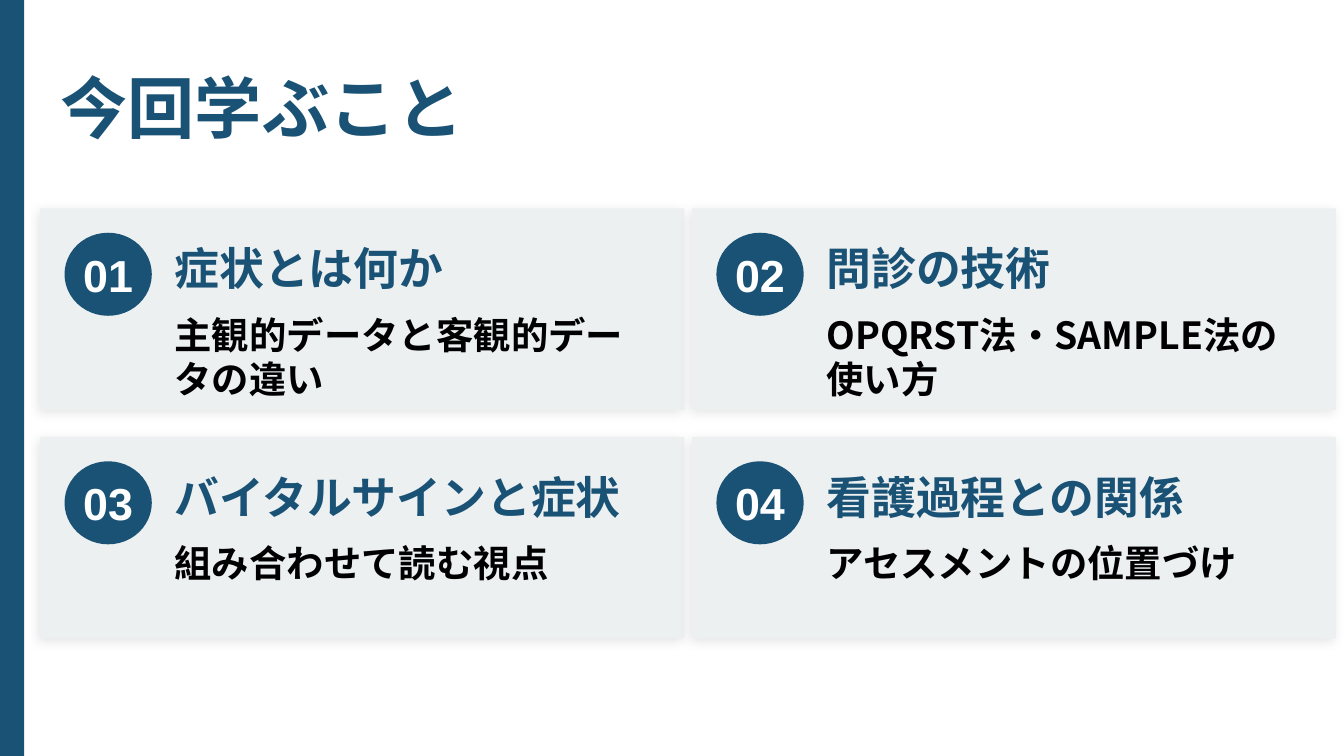
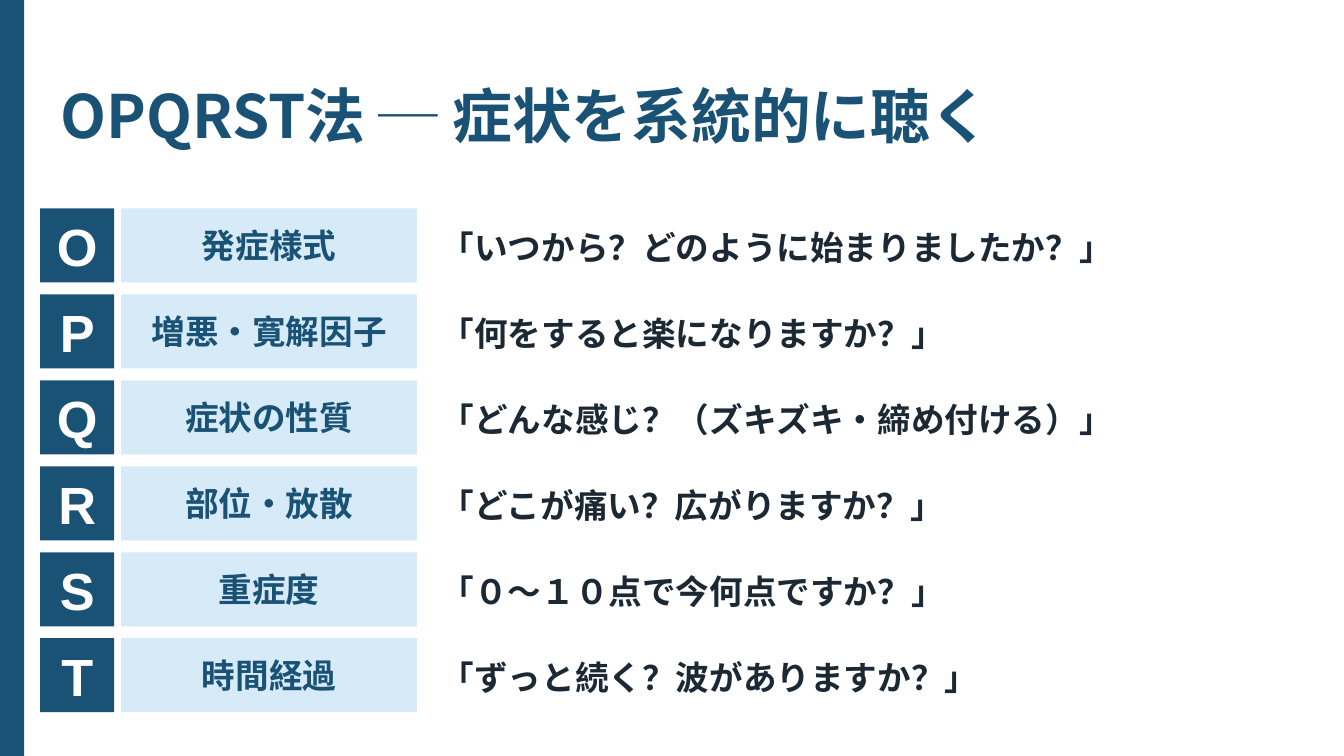
"""Build two nursing slides: the lesson overview and the OPQRST interview method."""
from lxml import etree
from pptx import Presentation
from pptx.dml.color import RGBColor
from pptx.enum.shapes import MSO_SHAPE
from pptx.enum.text import MSO_ANCHOR, MSO_AUTO_SIZE, PP_ALIGN
from pptx.oxml.ns import qn
from pptx.util import Cm, Pt

RECT, OVAL = MSO_SHAPE.RECTANGLE, MSO_SHAPE.OVAL
TOP, MIDDLE = MSO_ANCHOR.TOP, MSO_ANCHOR.MIDDLE
LEFT, CENTER = PP_ALIGN.LEFT, PP_ALIGN.CENTER
NO_AUTOFIT = MSO_AUTO_SIZE.NONE

OVERVIEW_TITLE = "今回学ぶこと"
TOPICS = [
    ("症状とは何か", "主観的データと客観的データの違い"),
    ("問診の技術", "OPQRST法・SAMPLE法の使い方"),
    ("バイタルサインと症状", "組み合わせて読む視点"),
    ("看護過程との関係", "アセスメントの位置づけ"),
]
METHOD_TITLE = "OPQRST法 ─ 症状を系統的に聴く"
STEPS = [
    ("O", "発症様式", "「いつから？どのように始まりましたか？」"),
    ("P", "増悪・寛解因子", "「何をすると楽になりますか？」"),
    ("Q", "症状の性質", "「どんな感じ？（ズキズキ・締め付ける）」"),
    ("R", "部位・放散", "「どこが痛い？広がりますか？」"),
    ("S", "重症度", "「０〜１０点で今何点ですか？」"),
    ("T", "時間経過", "「ずっと続く？波がありますか？」"),
]

COLORS = {
    "navy": "1A5276", "card": "ECF0F1", "sky": "D6EAF8",
    "white": "FFFFFF", "black": "000000", "ink": "1C2833",
}
JP, LATIN = "Noto Sans CJK JP", "Arial"
STYLES = {
    "overview_title": (JP, 36, "navy", LEFT, MIDDLE),
    "method_title": (JP, 32, "navy", LEFT, MIDDLE),
    "number": (LATIN, 24, "white", CENTER, MIDDLE),
    "topic": (JP, 24, "navy", LEFT, MIDDLE),
    "detail": (JP, 20, "black", LEFT, TOP),
    "letter": (LATIN, 28, "white", CENTER, MIDDLE),
    "label": (JP, 18, "navy", CENTER, MIDDLE),
    "question": (JP, 18, "ink", LEFT, MIDDLE),
}
SLIDE_W, SLIDE_H = 25.4, 14.29
GRID_X, GRID_Y = 0.76, 3.94


def color(name):
    return RGBColor.from_string(COLORS[name])


def write(s, text, style, inset=None):
    name, size, tone, align, anchor = STYLES[style]
    tf = s.text_frame
    frame = {"word_wrap": True, "auto_size": NO_AUTOFIT, "vertical_anchor": anchor}
    if inset is not None:
        frame.update({f"margin_{side}": Cm(inset) for side in ("left", "top", "right", "bottom")})
    for key, value in frame.items():
        setattr(tf, key, value)
    p = tf.paragraphs[0]
    p.alignment = align
    r = p.add_run()
    r.text = text
    for key, value in {"name": name, "size": Pt(size), "bold": True}.items():
        setattr(r.font, key, value)
    r.font.color.rgb = color(tone)
    etree.SubElement(r.font._element, qn("a:ea"), typeface=name)


def add_block(slide, kind, box, fill, text=None, style=None):
    s = slide.shapes.add_shape(kind, *map(Cm, box))
    s.fill.solid()
    s.fill.fore_color.rgb = color(fill)
    s.line.fill.background()
    s.shadow.inherit = False
    if text:
        write(s, text, style, inset=0)
    return s


def add_text(slide, box, text, style):
    write(slide.shapes.add_textbox(*map(Cm, box)), text, style)


def add_soft_shadow(s):
    effects = s._element.spPr.find(qn("a:effectLst"))
    shadow = etree.SubElement(effects, qn("a:outerShdw"), blurRad=str(Pt(6)),
                              dist=str(Pt(2)), dir="8100000", algn="bl", rotWithShape="0")
    tone = etree.SubElement(shadow, qn("a:srgbClr"), val=COLORS["black"])
    etree.SubElement(tone, qn("a:alpha"), val="10000")


def add_slide(prs, title, style, title_y):
    slide = prs.slides.add_slide(prs.slide_layouts[5])
    s = slide.shapes.title
    box = {"left": 0.89, "top": title_y, "width": 23.62, "height": 1.65}
    for key, value in box.items():
        setattr(s, key, Cm(value))
    write(s, title, style)
    add_block(slide, RECT, (0, 0, 0.46, SLIDE_H), "navy")
    return slide


def build_overview(prs):
    slide = add_slide(prs, OVERVIEW_TITLE, "overview_title", 1.19)
    for i, (topic, detail) in enumerate(TOPICS):
        row, col = divmod(i, 2)
        x, y = GRID_X + col * 12.32, GRID_Y + row * 4.32
        add_soft_shadow(add_block(slide, RECT, (x, y, 12.17, 3.81), "card"))
        add_block(slide, OVAL, (x + 0.46, y + 0.46, 1.65, 1.57), "navy", f"{i + 1:02}", "number")
        add_text(slide, (x + 2.29, y + 0.46, 9.35, 1.32), topic, "topic")
        add_text(slide, (x + 2.29, y + 1.83, 9.35, 1.32), detail, "detail")


def build_method(prs):
    slide = add_slide(prs, METHOD_TITLE, "method_title", 1.35)
    for i, (letter, label, question) in enumerate(STEPS):
        y = GRID_Y + i * 1.625
        add_block(slide, RECT, (GRID_X, y, 1.4, 1.4), "navy", letter, "letter")
        add_block(slide, RECT, (2.29, y, 5.59, 1.4), "sky", label, "label")
        add_text(slide, (8.08, y + 0.1, 16.51, 1.27), question, "question")


def main():
    prs = Presentation()
    prs.slide_width, prs.slide_height = Cm(SLIDE_W), Cm(SLIDE_H)
    build_overview(prs)
    build_method(prs)
    prs.save("out.pptx")


if __name__ == "__main__":
    main()
